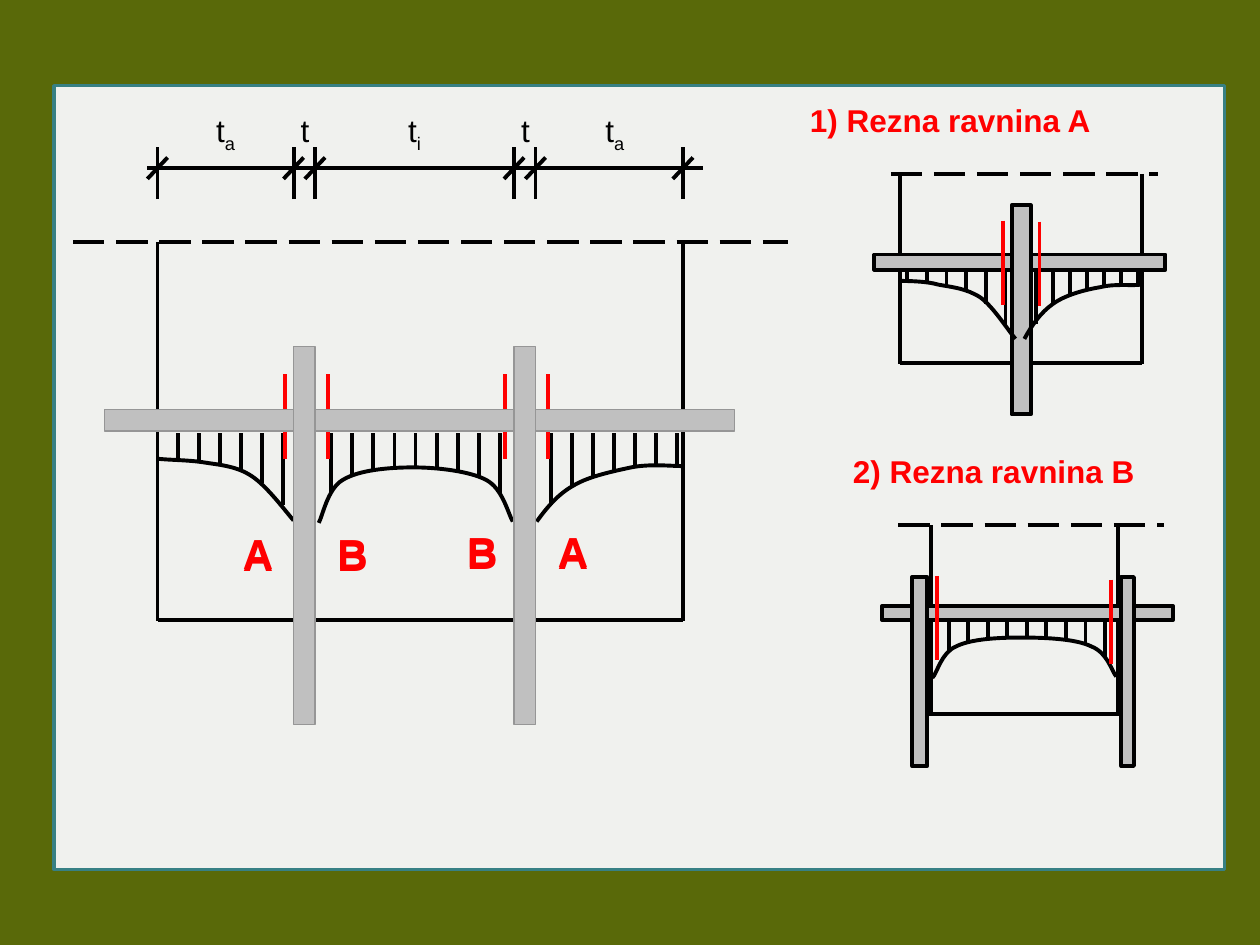
from lxml import etree
from pptx import Presentation
from pptx.dml.color import RGBColor
from pptx.enum.dml import MSO_LINE
from pptx.enum.shapes import MSO_CONNECTOR, MSO_SHAPE
from pptx.enum.text import MSO_AUTO_SIZE, PP_ALIGN
from pptx.oxml.ns import qn
from pptx.util import Inches, Pt

STRAIGHT = MSO_CONNECTOR.STRAIGHT
RECTANGLE = MSO_SHAPE.RECTANGLE
LONG_DASH = MSO_LINE.LONG_DASH
GROW = MSO_AUTO_SIZE.SHAPE_TO_FIT_TEXT
LEFT, CENTER = PP_ALIGN.LEFT, PP_ALIGN.CENTER

OLIVE = RGBColor(0x59, 0x69, 0x09)
PAPER = RGBColor(0xF0, 0xF1, 0xEE)
TEAL = RGBColor(0x37, 0x80, 0x84)
BLACK = RGBColor(0, 0, 0)
RED = RGBColor(0xFF, 0, 0)
SILVER = RGBColor(0xC0, 0xC0, 0xC0)
GRAY = RGBColor(0x96, 0x96, 0x96)

deck = Presentation()
deck.slide_width, deck.slide_height = Inches(10), Inches(7.5)
page = deck.slides.add_slide(deck.slide_layouts[6])
page.background.fill.solid()
page.background.fill.fore_color.rgb = OLIVE


def draw_line(x1, y1, x2, y2, color=BLACK, dash=None):
    line = page.shapes.add_connector(
        STRAIGHT, Inches(x1), Inches(y1), Inches(x2), Inches(y2))
    line.line.color.rgb = color
    line.line.width = Pt(2.25)
    if dash:
        line.line.dash_style = dash
    etree.SubElement(line._element.spPr, qn("a:effectLst"))


def write_text(x, y, width, height, text, size, color, bold, align, subscript=""):
    box = page.shapes.add_textbox(Inches(x), Inches(y), Inches(width), Inches(height))
    box.text_frame.word_wrap = True
    box.text_frame.auto_size = GROW
    para = box.text_frame.paragraphs[0]
    para.alignment = align
    for part in (text, subscript):
        if part:
            span = para.add_run()
            span.text = part
            span.font.name = "Arial"
            span.font.size = Pt(size)
            span.font.bold = bold
            span.font.color.rgb = color
            if part == subscript:
                span._r.get_or_add_rPr().set("baseline", "-25000")


# Panel, detail frames, beams and columns, then the main view over its curves
panel = [(0.43, 0.68, 9.29, 6.22, PAPER, TEAL, 2)]
detail_bars = [
    (6.94, 2.02, 2.31, 0.12, SILVER, BLACK, 2.25),
    (8.03, 1.63, 0.15, 1.66, SILVER, BLACK, 2.25),
    (7, 4.81, 2.31, 0.11, SILVER, BLACK, 2.25),
    (7.24, 4.58, 0.12, 1.5, SILVER, BLACK, 2.25),
    (8.9, 4.58, 0.1, 1.5, SILVER, BLACK, 2.25),
]
main_bars = [
    (0.83, 3.25, 5, 0.17, SILVER, GRAY, 1),
    (2.33, 2.75, 0.17, 3, SILVER, GRAY, 1),
    (4.08, 2.75, 0.17, 3, SILVER, GRAY, 1),
]
# Slab edges: left, right, top, bottom
detail_frames = [(7.14, 9.06, 1.38, 2.88), (7.39, 8.87, 4.17, 5.67)]
main_frames = [(1.25, 5.42, 1.92, 4.92)]

# Moment curves: start point followed by Bezier control and end points
curves = [
    [(1.25, 3.64), (1.31, 3.65), (1.5, 3.65), (1.62, 3.67), (1.75, 3.69),
     (1.88, 3.7), (2, 3.78), (2.12, 3.86), (2.26, 4.05), (2.33, 4.13)],
    [(2.53, 4.15), (2.56, 4.1), (2.6, 3.88), (2.72, 3.81), (2.85, 3.73),
     (3.09, 3.71), (3.28, 3.71), (3.47, 3.71), (3.73, 3.74), (3.86, 3.81),
     (3.99, 3.88), (4.03, 4.07), (4.07, 4.14)],
    [(4.26, 4.14), (4.34, 4.03), (4.43, 3.92), (4.56, 3.85), (4.68, 3.78),
     (4.87, 3.74), (5.01, 3.71), (5.16, 3.68), (5.33, 3.7), (5.42, 3.7)],
    [(7.13, 2.23), (7.18, 2.23), (7.35, 2.23), (7.45, 2.26), (7.56, 2.28),
     (7.67, 2.29), (7.78, 2.36), (7.88, 2.43), (8, 2.62), (8.06, 2.69)],
    [(8.13, 2.69), (8.19, 2.58), (8.26, 2.48), (8.36, 2.41), (8.46, 2.34),
     (8.61, 2.3), (8.73, 2.28), (8.84, 2.25), (8.99, 2.27), (9.05, 2.26)],
    [(7.4, 5.38), (7.44, 5.34), (7.47, 5.18), (7.59, 5.13), (7.71, 5.07),
     (7.93, 5.06), (8.11, 5.06), (8.29, 5.06), (8.54, 5.07), (8.66, 5.13),
     (8.79, 5.18), (8.82, 5.32), (8.86, 5.37)],
]
# Hatching under the beams: first x, spacing, top, lower ends
hatches = [
    (1.41, 0.167, 3.44, [3.65, 3.65, 3.69, 3.73, 3.83, 4.01]),
    (2.63, 0.167, 3.44, [3.91, 3.77, 3.73, 3.71, 3.71, 3.72, 3.74, 3.79, 3.92]),
    (4.37, 0.167, 3.44, [4.01, 3.86, 3.79, 3.74, 3.71, 3.71, 3.71]),
    (7.2, 0.156, 2.13, [2.24, 2.24, 2.26, 2.31, 2.41, 2.58]),
    (8.22, 0.135, 2.13, [2.57, 2.41, 2.35, 2.31, 2.27, 2.27, 2.27]),
    (7.53, 0.155, 4.92, [5.16, 5.09, 5.07, 5.06, 5.06, 5.06, 5.07, 5.1, 5.21]),
]
# Section planes: x, top
planes = [(2.26, 2.97), (2.6, 2.97), (4.01, 2.97), (4.35, 2.97),
          (7.96, 1.75), (8.25, 1.76), (7.44, 4.57), (8.82, 4.6)]

for frames, bars in (([], panel), (detail_frames, detail_bars), (main_frames, main_bars)):
    if bars is main_bars:
        # Curves, hatching and section planes
        for start, *points in curves:
            builder = page.shapes.build_freeform(
                Inches(start[0]), Inches(start[1]))
            builder.add_line_segments(
                [(Inches(x), Inches(y)) for x, y in points], close=False)
            curve = builder.convert_to_shape()
            curve.shadow.inherit = False
            curve.fill.background()
            curve.line.color.rgb = BLACK
            curve.line.width = Pt(2.25)
            # Every three line points become one Bezier segment
            segments = list(curve._element.iter(qn("a:lnTo")))
            for i in range(0, len(segments), 3):
                segments[i].tag = qn("a:cubicBezTo")
                for extra in segments[i + 1:i + 3]:
                    segments[i].append(extra[0])
                    extra.getparent().remove(extra)
        for first, step, top, ends in hatches:
            for i, end in enumerate(ends):
                draw_line(first + i * step, top, first + i * step, end)
        for x, top in planes:
            draw_line(x, top, x, top + 0.67, RED)

    for left, right, top, bottom in frames:
        draw_line(left, top, left, bottom + 0.01)
        draw_line(right, top, right, bottom + 0.01)
        draw_line(left, bottom, right, bottom)
    for x, y, width, height, fill, edge, weight in bars:
        bar = page.shapes.add_shape(
            RECTANGLE, Inches(x), Inches(y), Inches(width), Inches(height))
        bar.shadow.inherit = False
        bar.fill.solid()
        bar.fill.fore_color.rgb = fill
        bar.line.color.rgb = edge
        bar.line.width = Pt(weight)

# Dashed slab continuation
for left, right, y in ((0.58, 6.25, 1.92), (7.07, 9.19, 1.38), (7.13, 9.24, 4.17)):
    draw_line(left, y, right, y, dash=LONG_DASH)

# Dimension line with ticks
draw_line(1.17, 1.33, 5.58, 1.33)
for x in (1.25, 2.33, 2.5, 4.08, 4.25, 5.42):
    draw_line(x, 1.58, x, 1.17)
    draw_line(x - 0.08, 1.42, x + 0.08, 1.25)
for x, width, subscript in ((1.58, 0.42, "a"), (2.17, 0.5, ""), (3.08, 0.42, "i"),
                            (3.92, 0.5, ""), (4.67, 0.42, "a")):
    write_text(x, 0.83, width, 0.4, "t", 18, BLACK, False, CENTER, subscript)

# Plane letters, doubled for extra weight
for x, y, shift, letter in ((1.83, 4.15, 0.01, "A"), (2.58, 4.15, 0.01, "B"),
                            (4.33, 4.14, 0.02, "A"), (3.61, 4.14, 0.02, "B")):
    for top in (y, y - shift):
        write_text(x, top, 0.42, 0.5, letter, 24, RED, True, LEFT)

# Detail titles
for x, y, title in ((6.33, 0.75, "1) Rezna ravnina A"), (6.67, 3.54, "2) Rezna ravnina B")):
    write_text(x, y, 2.92, 0.41, title, 18, RED, True, LEFT)

deck.save("out.pptx")
